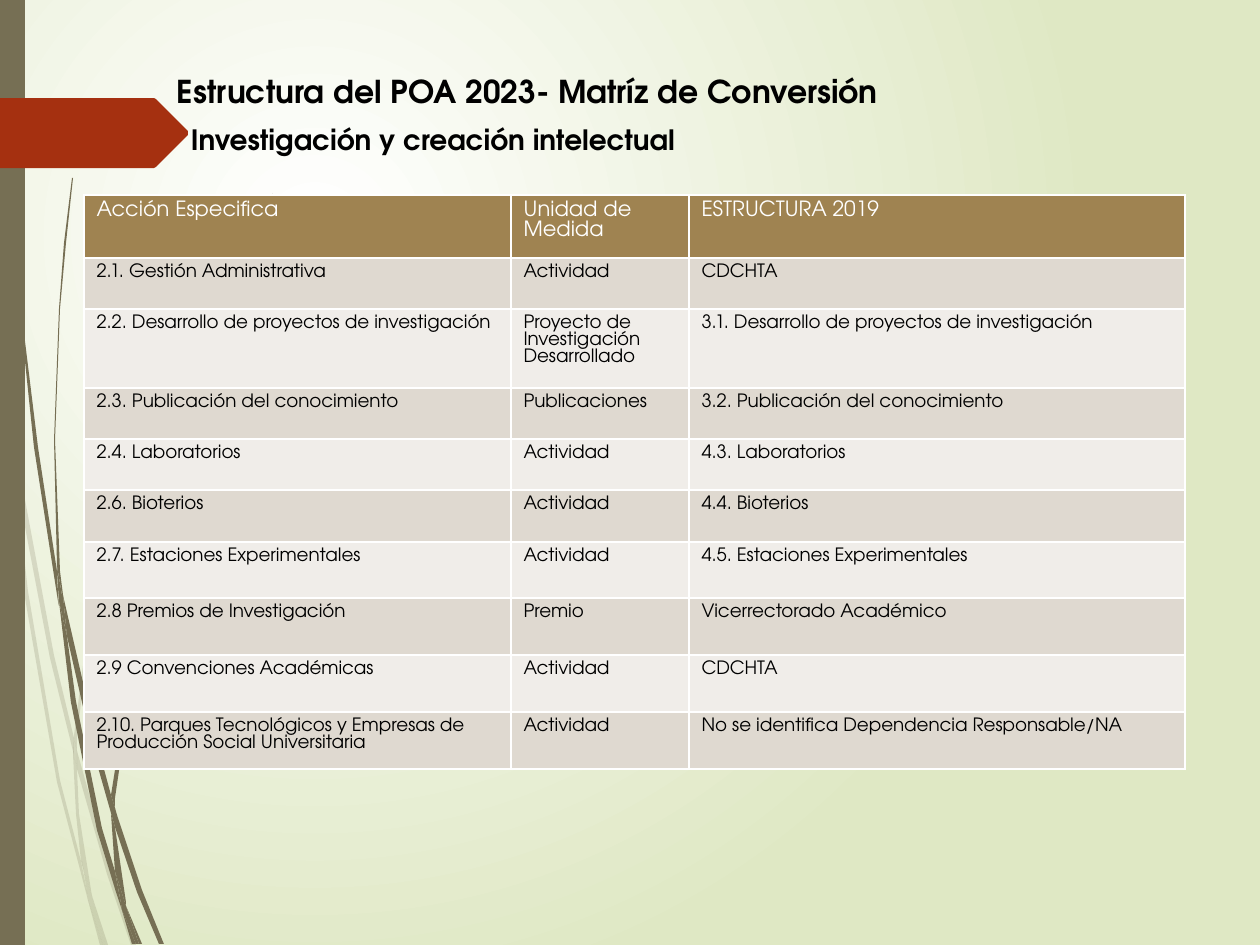
from lxml import etree
from pptx import Presentation
from pptx import util as u
from pptx.dml.color import RGBColor
from pptx.enum import shapes, text
from pptx.oxml.ns import qn

PX = u.Inches(1) // 126
FONT = "TeX Gyre Adventor"
COLORS = {
    "olive": "766F54", "red": "A53010", "header": "9F8351",
    "band_dark": "DFD9D0", "band_light": "F0EDE9",
    "white": "FFFFFF", "green": "DFE8C4", "black": "000000",
}

# Grass outlines, in px
PALE_GRASS = [
    [(10, 441), (8, 406), (0, 355), (0, 377), (9, 433)],
    [(50, 658), (74, 755), (74, 738), (54, 655), (13, 435), (15, 474)],
    [(81, 765), (77, 751), (77, 769), (107, 874), (131, 945), (136, 945), (111, 872)],
    [(105, 945), (108, 945), (92, 896)],
    [(81, 861), (60, 780), (28, 591), (15, 474), (10, 441), (24, 592), (57, 782),
     (81, 873), (88, 900), (87, 891)],
    [(73, 755), (76, 814), (81, 861), (84, 872), (92, 896), (91, 890), (79, 814),
     (77, 769), (77, 766)],
    [(77, 736), (96, 582), (140, 440), (200, 309), (236, 249), (253, 220), (273, 194),
     (273, 193), (252, 220), (234, 248), (199, 307), (139, 438), (94, 581), (74, 736),
     (74, 738), (77, 751)],
    [(88, 900), (100, 945), (103, 945)],
    [(77, 766), (77, 769), (77, 751), (74, 738), (73, 755)],
    [(84, 872), (82, 861), (87, 891), (88, 900), (103, 945), (105, 945), (92, 896)],
]
DARK_GRASS = [
    [(6, 139), (18, 294), (34, 447), (58, 601), (59, 606), (57, 576), (57, 571),
     (38, 447), (19, 292), (8, 137), (5, 60), (4, 0), (3, 0), (4, 60)],
    [(92, 746), (111, 813), (111, 798), (111, 795), (97, 743), (63, 595), (67, 636)],
    [(118, 818), (115, 808), (115, 827), (137, 892), (159, 944), (164, 944), (142, 890)],
    [(115, 871), (102, 828), (76, 701), (67, 636), (59, 601), (71, 702), (97, 830),
     (116, 892), (122, 910), (121, 903)],
    [(63, 595), (60, 571), (55, 440), (60, 309), (66, 243), (73, 178), (72, 178),
     (64, 243), (59, 309), (54, 440), (57, 566), (62, 595)],
    [(139, 944), (142, 944), (126, 906)],
    [(59, 601), (67, 636), (63, 595), (62, 595), (57, 566), (57, 571)],
    [(115, 798), (130, 696), (165, 600), (213, 512), (241, 471), (256, 452), (272, 433),
     (271, 433), (255, 451), (240, 470), (212, 510), (163, 597), (127, 694), (111, 795),
     (115, 808)],
    [(122, 910), (132, 944), (136, 944)],
    [(111, 813), (115, 871), (121, 890), (126, 906), (126, 902), (115, 827), (113, 820)],
    [(111, 813), (113, 820), (115, 827), (115, 808), (111, 795), (111, 798)],
    [(121, 890), (115, 871), (121, 903), (122, 910), (136, 944), (139, 944), (126, 906)],
]
ARROW = [(0, 98), (154, 98), (156, 99), (188, 131), (188, 135), (156, 167),
         (154, 168), (0, 168)]

# Table content
COLUMN_WIDTHS = [427, 178, 496]
ROW_HEIGHTS = [62, 51, 79, 51, 51, 52, 56, 57, 57, 57]
ROWS = [
    ("Acción Especifica", "Unidad de Medida", "ESTRUCTURA 2019"),
    ("2.1. Gestión Administrativa", "Actividad", "CDCHTA"),
    ("2.2. Desarrollo de proyectos de investigación",
     "Proyecto de Investigación Desarrollado",
     "3.1. Desarrollo de proyectos de investigación"),
    ("2.3. Publicación del conocimiento", "Publicaciones",
     "3.2. Publicación del conocimiento"),
    ("2.4. Laboratorios", "Actividad", "4.3. Laboratorios"),
    ("2.6. Bioterios", "Actividad", "4.4. Bioterios"),
    ("2.7. Estaciones Experimentales", "Actividad", "4.5. Estaciones Experimentales"),
    ("2.8 Premios de Investigación", "Premio", "Vicerrectorado Académico"),
    ("2.9 Convenciones Académicas", "Actividad", "CDCHTA"),
    ("2.10. Parques Tecnológicos y Empresas de Producción Social Universitaria",
     "Actividad", "No se identifica Dependencia Responsable/NA"),
]


def rgb(name):
    return RGBColor.from_string(COLORS[name])


def write_text(frame, words, size, color="black", bold=False):
    run = frame.paragraphs[0].add_run()
    run.text = words
    run.font.name = FONT
    run.font.size = u.Pt(size)
    run.font.bold = bold
    run.font.color.rgb = rgb(color)


def paint(shape, color, opacity=100):
    shape.shadow.inherit = False
    shape.line.fill.background()
    shape.fill.solid()
    shape.fill.fore_color.rgb = rgb(color)
    if opacity < 100:
        fill_color = shape.fill._xPr.find(".//" + qn("a:srgbClr"))
        etree.SubElement(fill_color, qn("a:alpha"), val=str(opacity * 1000))


def add_outline(parent, points, color, opacity=100):
    builder = parent.shapes.build_freeform(*points[0], scale=PX)
    builder.add_line_segments(points[1:], close=True)
    paint(builder.convert_to_shape(), color, opacity)


def add_grass(slide, blades, opacity=100):
    group = slide.shapes.add_group_shape()
    for blade in blades:
        add_outline(group, blade, "olive", opacity)


def add_heading(slide, words, left, top, width, height, size, wrap=True, inset=13):
    box = slide.shapes.add_textbox(left * PX, top * PX, width * PX, height * PX)
    frame = box.text_frame
    frame.word_wrap = wrap
    frame.auto_size = text.MSO_AUTO_SIZE.SHAPE_TO_FIT_TEXT
    frame.margin_left = inset * PX
    write_text(frame, words, size, bold=True)


def set_background(slide):
    fill = slide.background.fill
    fill.gradient()
    for stop, color, position in zip(fill.gradient_stops, ("white", "green"), (0, 1)):
        stop.color.rgb = rgb(color)
        stop.position = position
    linear = slide._element.find(".//" + qn("a:lin"))
    circle = etree.Element(qn("a:path"), path="circle")
    etree.SubElement(circle, qn("a:fillToRect"),
                     l="50000", t="50000", r="100000", b="100000")
    linear.getparent().replace(linear, circle)


def set_borders(cell):
    properties = cell._tc.get_or_add_tcPr()
    for position, tag in enumerate(("a:lnL", "a:lnR", "a:lnT", "a:lnB")):
        line = etree.Element(qn(tag), w=str(u.Pt(1)))
        fill = etree.SubElement(line, qn("a:solidFill"))
        etree.SubElement(fill, qn("a:srgbClr"), val=COLORS["white"])
        properties.insert(position, line)


def add_matrix(slide, left, top):
    frame = slide.shapes.add_table(
        len(ROWS), len(COLUMN_WIDTHS), left * PX, top * PX,
        sum(COLUMN_WIDTHS) * PX, sum(ROW_HEIGHTS) * PX)
    table = frame.table
    for column, width in zip(table.columns, COLUMN_WIDTHS):
        column.width = width * PX
    for index, (row, height) in enumerate(zip(table.rows, ROW_HEIGHTS)):
        row.height = height * PX
        header = index == 0
        band = "header" if header else ("band_light", "band_dark")[index % 2]
        for cell, words in zip(row.cells, ROWS[index]):
            cell.fill.solid()
            cell.fill.fore_color.rgb = rgb(band)
            set_borders(cell)
            write_text(cell.text_frame, words, 12 if header else 10.5,
                       color="white" if header else "black")


def main():
    presentation = Presentation()
    presentation.slide_width = 1260 * PX
    presentation.slide_height = 945 * PX
    slide = presentation.slides.add_slide(presentation.slide_layouts[6])

    # Backdrop
    set_background(slide)
    add_grass(slide, PALE_GRASS, opacity=20)
    add_grass(slide, DARK_GRASS)
    side_bar = slide.shapes.add_shape(shapes.MSO_SHAPE.RECTANGLE, 0, 0, 25 * PX, 945 * PX)
    paint(side_bar, "olive")
    add_outline(slide, ARROW, "red")

    # Headings
    add_heading(slide, "Estructura del POA 2023- Matríz de Conversión",
                164, 66, 736, 50, 18, wrap=False)
    add_heading(slide, "Investigación y creación intelectual",
                163, 116, 1071, 47, 16, inset=28)

    # Conversion matrix
    add_matrix(slide, 84, 195)

    presentation.save("out.pptx")


if __name__ == "__main__":
    main()
